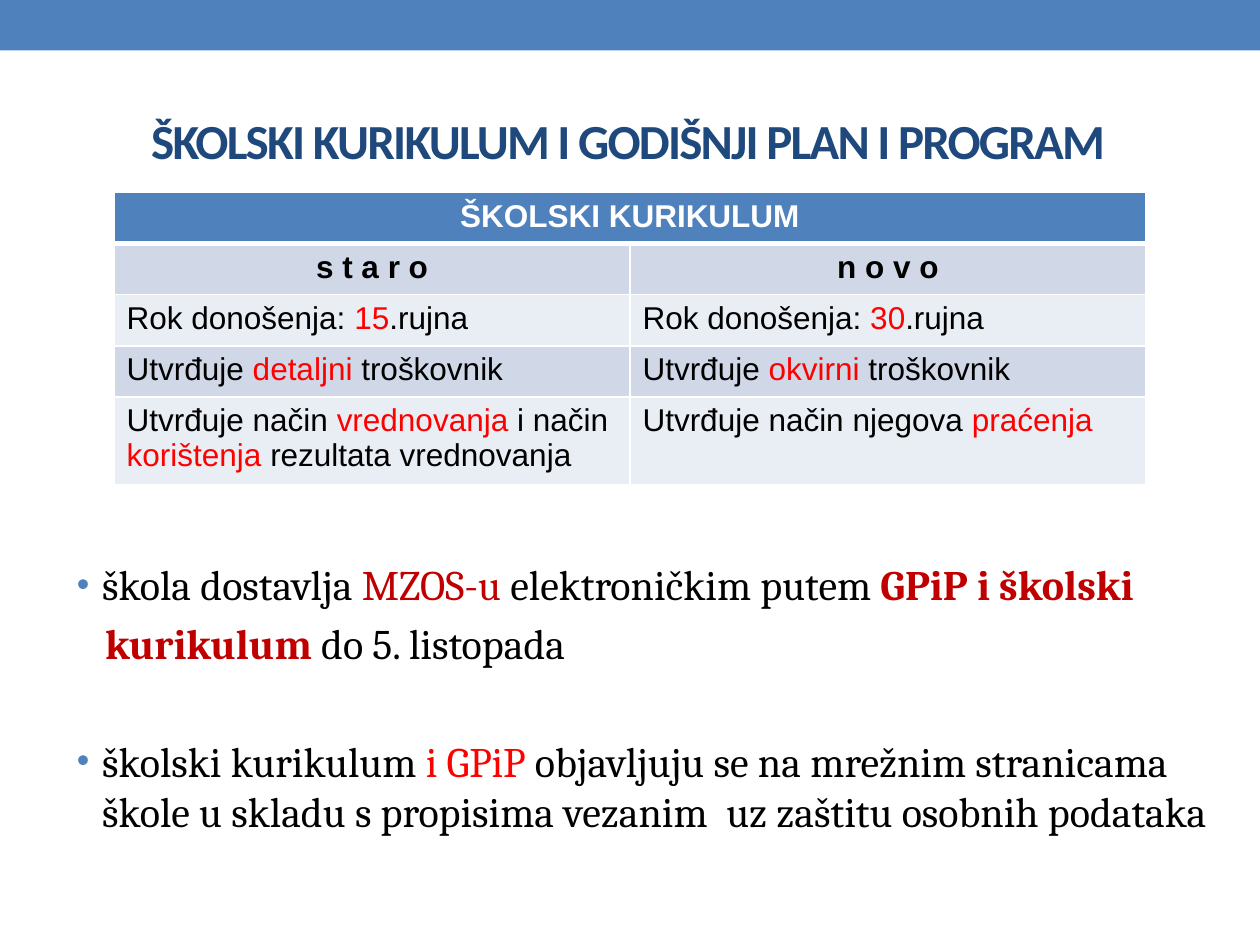
from dataclasses import dataclass

from lxml import etree
from pptx import Presentation
from pptx.dml.color import RGBColor
from pptx.enum.shapes import MSO_SHAPE
from pptx.enum.text import MSO_ANCHOR, PP_ALIGN
from pptx.oxml.ns import qn
from pptx.util import Cm, Pt

RECT = MSO_SHAPE.RECTANGLE
MIDDLE, TOP = MSO_ANCHOR.MIDDLE, MSO_ANCHOR.TOP
CENTER, LEFT = PP_ALIGN.CENTER, PP_ALIGN.LEFT


@dataclass(frozen=True)
class Theme:
    """Colours, fonts and type sizes of the slide."""
    accent: str = "4F81BD"
    navy: str = "1F497D"
    white: str = "FFFFFF"
    black: str = "000000"
    red: str = "FF0000"
    dark_red: str = "C00000"
    band_dark: str = "D0D8E8"
    band_light: str = "E9EDF4"
    title_font: str = "Calibri"
    table_font: str = "Arial"
    body_font: str = "Cambria"
    title_size: int = 28
    table_size: int = 18
    body_size: int = 24


T = Theme()
TABLE_ROWS = [
    (["Rok donošenja: ", ("15", T.red), ".rujna"],
     ["Rok donošenja: ", ("30", T.red), ".rujna"]),
    (["Utvrđuje ", ("detaljni", T.red), " troškovnik"],
     ["Utvrđuje ", ("okvirni", T.red), " troškovnik"]),
    (["Utvrđuje način ", ("vrednovanja ", T.red), "i način ",
      ("korištenja", T.red), " rezultata vrednovanja"],
     ["Utvrđuje način njegova ", ("praćenja", T.red)]),
]


def rgb(color):
    """Turn a hex string into a colour."""
    return RGBColor.from_string(color)


def write(p, parts, *, font, size, color=T.black, bold=False, align=LEFT, before=0, spacing=None):
    """Write parts, each a text or (text, colour[, bold]), into a paragraph."""
    p.alignment = align
    p.space_before = Pt(before)
    for part in parts:
        text, *own = [part] if isinstance(part, str) else part
        c, b = own + [color, bold][len(own):]
        r = p.add_run()
        r.text = text
        r.font.name, r.font.size, r.font.bold = font, Pt(size), b
        r.font.color.rgb = rgb(c)
        if spacing is not None:
            r._r.get_or_add_rPr().set("spc", str(spacing))


def indent(p, margin, bullet=False):
    """Indent a paragraph, with a hanging bullet if asked."""
    pPr = p._p.get_or_add_pPr()
    pPr.set("marL", str(margin))
    pPr.set("indent", str(-margin if bullet else 0))
    if bullet:
        clr = etree.SubElement(pPr, qn("a:buClr"))
        etree.SubElement(clr, qn("a:srgbClr"), val=T.accent)
        etree.SubElement(pPr, qn("a:buSzPct"), val="85000")
        etree.SubElement(pPr, qn("a:buFont"), typeface="Arial")
        etree.SubElement(pPr, qn("a:buChar"), char="•")


def add_text_box(s, left, top, width, height, anchor=TOP):
    """Add a wrapping text box and return its text frame."""
    tf = s.shapes.add_textbox(Cm(left), Cm(top), Cm(width), Cm(height)).text_frame
    tf.word_wrap = True
    tf.vertical_anchor = anchor
    return tf


def add_band(s, width):
    """Add the coloured band along the top edge."""
    sp = s.shapes.add_shape(RECT, 0, 0, width, Cm(1.02))
    sp.shadow.inherit = False
    sp.fill.solid()
    sp.fill.fore_color.rgb = rgb(T.accent)
    sp.line.fill.background()


def style_cell(cell, fill, bottom=1):
    """Give a cell white borders and a solid fill."""
    tcPr = cell._tc.get_or_add_tcPr()
    for side, width in (("L", 1), ("R", 1), ("T", 1), ("B", bottom)):
        ln = etree.SubElement(tcPr, qn(f"a:ln{side}"), w=str(Pt(width)))
        solid = etree.SubElement(ln, qn("a:solidFill"))
        etree.SubElement(solid, qn("a:srgbClr"), val=T.white)
    cell.fill.solid()
    cell.fill.fore_color.rgb = rgb(fill)


def add_comparison(s):
    """Add the table that compares the old and new rules."""
    count = len(TABLE_ROWS) + 2
    table = s.shapes.add_table(count, 2, Cm(2.3), Cm(3.88),
                               Cm(20.8), Cm(1.03 * count)).table
    for col in table.columns:
        col.width = Cm(10.4)
    for i, row in enumerate(table.rows):
        row.height = Cm(1.03)
        fill = T.accent if i == 0 else T.band_dark if i % 2 else T.band_light
        for cell in row.cells:
            style_cell(cell, fill, 1 if i else 3)
    fmt = {"font": T.table_font, "size": T.table_size}
    head = table.cell(0, 0)
    head.merge(table.cell(0, 1))
    write(head.text_frame.paragraphs[0], ["ŠKOLSKI KURIKULUM"],
          color=T.white, bold=True, align=CENTER, **fmt)
    for j, text in enumerate(("s t a r o", "n o v o")):
        write(table.cell(1, j).text_frame.paragraphs[0], [text],
              bold=True, align=CENTER, **fmt)
    for i, row in enumerate(TABLE_ROWS, 2):
        for j, parts in enumerate(row):
            write(table.cell(i, j).text_frame.paragraphs[0], parts, **fmt)


def add_delivery_rules(s):
    """Add the bulleted text below the table."""
    tf = add_text_box(s, 1.3, 11.14, 23.42, 6.74)
    paragraphs = [
        (["škola dostavlja ", ("MZOS-u", T.dark_red), " elektroničkim putem ",
          ("GPiP i školski", T.dark_red, True)], 0, 0.51, True),
        ([("kurikulum ", T.dark_red, True), "do 5. listopada"], 4.8, 0.57, False),
        (["školski kurikulum ", ("i GPiP ", T.red),
          "objavljuju se na mrežnim stranicama škole u skladu s propisima "
          "vezanim  uz zaštitu osobnih podataka"], 38.4, 0.51, True),
    ]
    for i, (parts, before, margin, bullet) in enumerate(paragraphs):
        p = tf.add_paragraph() if i else tf.paragraphs[0]
        write(p, parts, font=T.body_font, size=T.body_size, before=before)
        indent(p, Cm(margin), bullet)


def main():
    """Build the slide and save it."""
    prs = Presentation()
    prs.slide_width, prs.slide_height = Cm(25.4), Cm(19.05)
    s = prs.slides.add_slide(prs.slide_layouts[6])
    add_band(s, prs.slide_width)
    tf = add_text_box(s, 1.04, 1.93, 23.24, 1.8, MIDDLE)
    write(tf.paragraphs[0], ["ŠKOLSKI KURIKULUM I GODIŠNJI PLAN I PROGRAM"],
          font=T.title_font, size=T.title_size, color=T.navy, bold=True,
          align=CENTER, spacing=-100)
    add_delivery_rules(s)
    add_comparison(s)
    prs.save("out.pptx")


if __name__ == "__main__":
    main()
